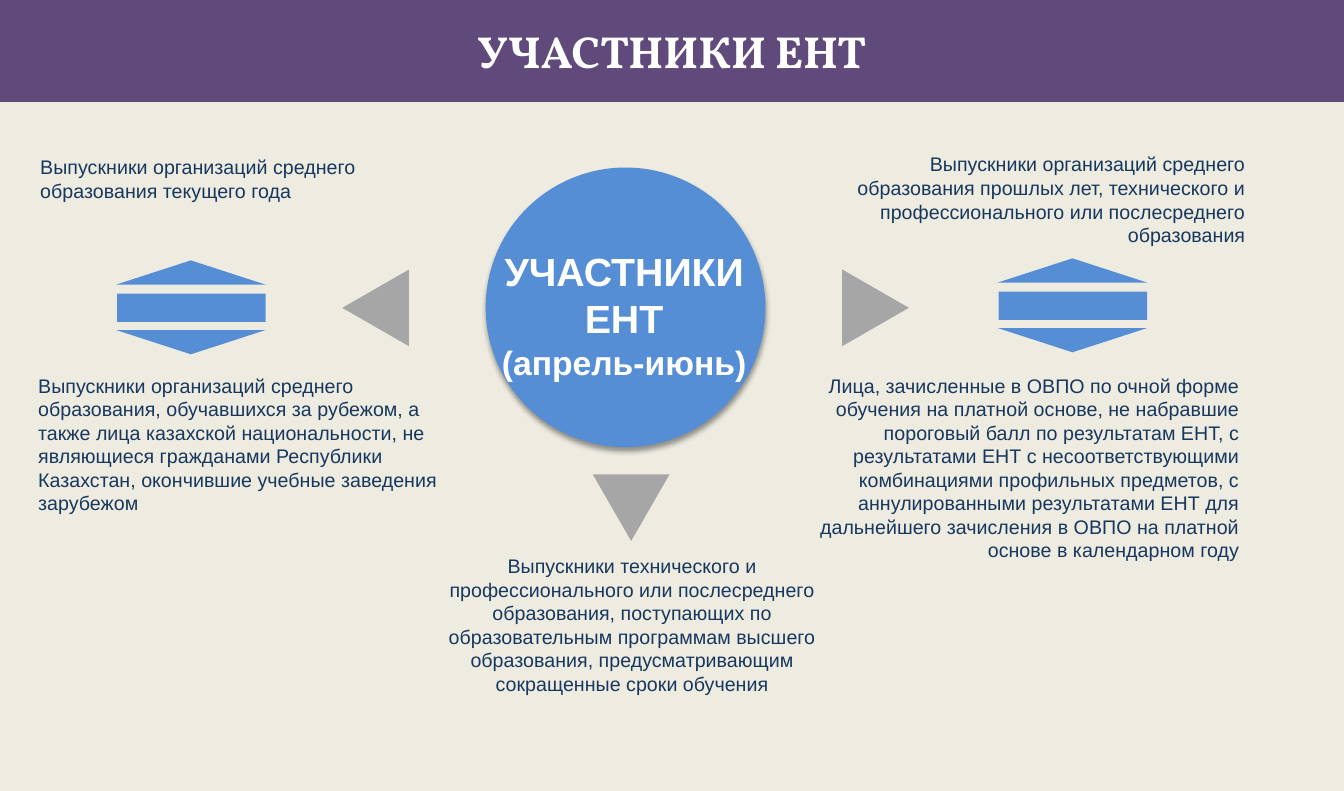
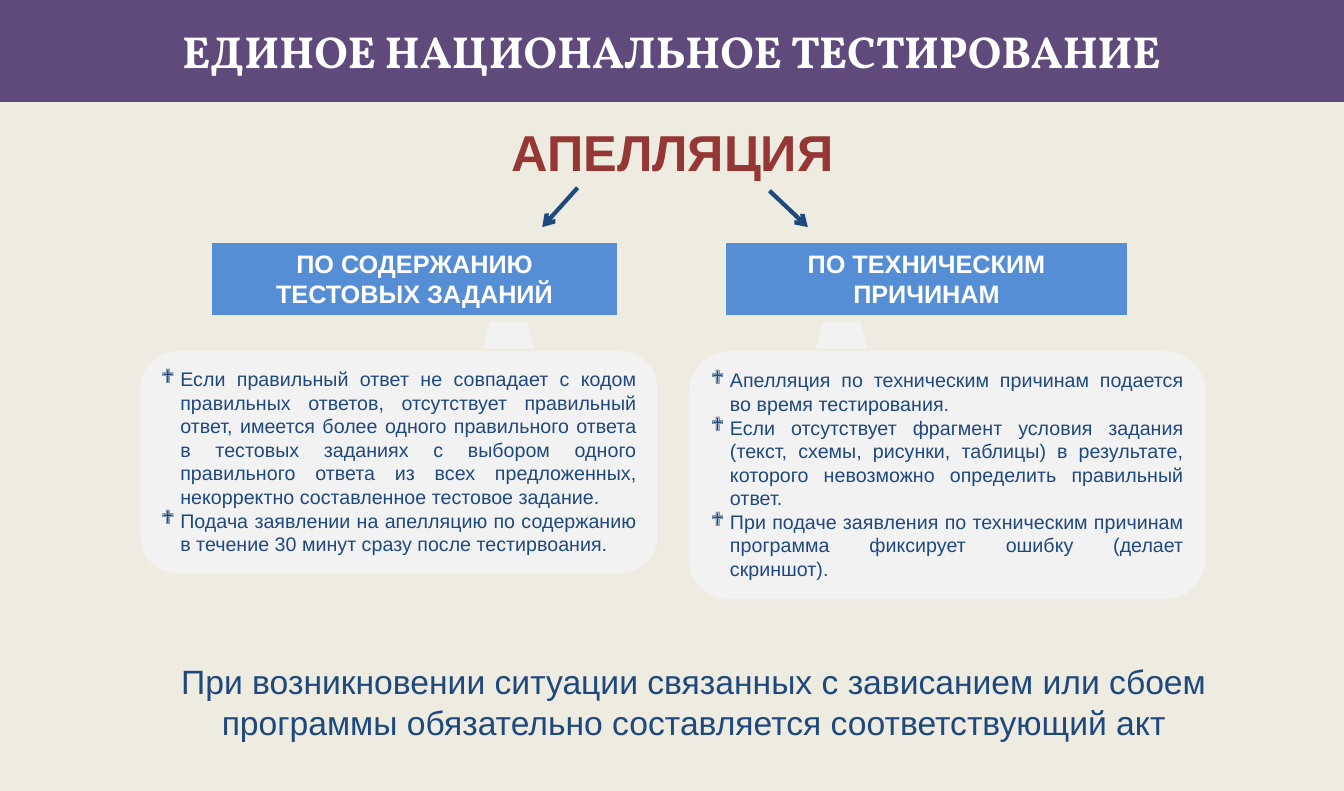
from dataclasses import dataclass

from lxml import etree
from pptx import Presentation
from pptx.dml.color import RGBColor
from pptx.enum.shapes import MSO_CONNECTOR, MSO_SHAPE
from pptx.enum.text import MSO_ANCHOR, MSO_AUTO_SIZE, PP_ALIGN
from pptx.oxml.ns import qn
from pptx.util import Emu, Inches, Pt

RECTANGLE = MSO_SHAPE.RECTANGLE
ROUNDED = MSO_SHAPE.ROUNDED_RECTANGLE
OVAL = MSO_SHAPE.OVAL
TRIANGLE = MSO_SHAPE.ISOSCELES_TRIANGLE
TRAPEZOID = MSO_SHAPE.TRAPEZOID
STRAIGHT = MSO_CONNECTOR.STRAIGHT
TOP, MIDDLE = MSO_ANCHOR.TOP, MSO_ANCHOR.MIDDLE
LEFT, CENTER, RIGHT = PP_ALIGN.LEFT, PP_ALIGN.CENTER, PP_ALIGN.RIGHT
JUSTIFY = PP_ALIGN.JUSTIFY
GROW = MSO_AUTO_SIZE.SHAPE_TO_FIT_TEXT
FIXED = MSO_AUTO_SIZE.NONE

SLIDE_WIDTH, SLIDE_HEIGHT = Emu(12169775), Emu(7165975)
BAND_HEIGHT = 1.01
BULLET_INDENT = 0.19


@dataclass(frozen=True)
class Theme:
    background: str = "EEECE1"
    band: str = "604A7B"
    accent: str = "558ED5"
    pointer: str = "A6A6A6"
    panel: str = "F2F2F2"
    white: str = "FFFFFF"
    body: str = "17375E"
    navy: str = "1F497D"
    red: str = "953735"
    title_font: str = "Vollkorn"
    body_font: str = "Arial"
    bullet_font: str = "Wingdings"
    title_size: int = 32
    heading_size: int = 36
    hub_size: int = 28
    large_size: int = 24
    label_size: int = 18
    body_size: int = 14


THEME = Theme()


def text_style(size, color, bold=False, font=THEME.body_font):
    return {"size": Pt(size), "bold": bold, "name": font}, color


TITLE = text_style(THEME.title_size, THEME.white, True, THEME.title_font)
HEADING = text_style(THEME.heading_size, THEME.red, True)
HUB = text_style(THEME.hub_size, THEME.white, True)
HUB_DATE = text_style(THEME.large_size, THEME.white, True)
LABEL = text_style(THEME.label_size, THEME.white, True)
BODY = text_style(THEME.body_size, THEME.body)
PANEL = text_style(THEME.body_size, THEME.navy)
NOTICE = text_style(THEME.large_size, THEME.navy)


def rgb(color):
    return RGBColor.from_string(color)


def inches(*lengths):
    return [Inches(length) for length in lengths]


def add_child(parent, tag, **attributes):
    child = etree.SubElement(parent, qn(tag))
    for name, value in attributes.items():
        child.set(name, str(value))
    return child


def add_bullet(paragraph):
    properties = paragraph._p.get_or_add_pPr()
    properties.set("marL", str(Inches(BULLET_INDENT)))
    properties.set("indent", str(-Inches(BULLET_INDENT)))
    add_child(properties, "a:buFont", typeface=THEME.bullet_font)
    add_child(properties, "a:buChar", char="❖")


def write_text(shape, lines, align=CENTER, anchor=TOP, auto_size=GROW, bulleted=False):
    frame = shape.text_frame
    frame_format = {"word_wrap": True, "auto_size": auto_size, "vertical_anchor": anchor}
    for name, value in frame_format.items():
        setattr(frame, name, value)
    for index, (text, (font_format, color)) in enumerate(lines):
        paragraph = frame.add_paragraph() if index else frame.paragraphs[0]
        paragraph.alignment = align
        if bulleted:
            add_bullet(paragraph)
        run = paragraph.add_run()
        run.text = text
        for name, value in font_format.items():
            setattr(run.font, name, value)
        run.font.color.rgb = rgb(color)


def add_figure(slide, kind, box, color, rotation=0):
    shape = slide.shapes.add_shape(kind, *inches(*box))
    shape.shadow.inherit = False
    shape.rotation = rotation
    shape.fill.solid()
    shape.fill.fore_color.rgb = rgb(color)
    shape.line.fill.background()
    return shape


def add_text(slide, box, lines, align=CENTER, anchor=TOP):
    write_text(slide.shapes.add_textbox(*inches(*box)), lines, align, anchor)


def add_titled_slide(presentation, title):
    slide = presentation.slides.add_slide(presentation.slide_layouts[6])
    band = add_figure(slide, RECTANGLE, (0, 0, SLIDE_WIDTH.inches, BAND_HEIGHT), THEME.band)
    write_text(band, [(title, TITLE)], anchor=MIDDLE, auto_size=FIXED)
    return slide


def add_hub(slide):
    circle = add_figure(slide, OVAL, (4.81, 1.66, 2.77, 2.77), THEME.accent)
    effects = circle._element.spPr.find(qn("a:effectLst"))
    shadow = add_child(effects, "a:outerShdw", blurRad=Pt(4), dist=Pt(3),
                       dir=90 * 60000, rotWithShape=0)
    color = add_child(shadow, "a:srgbClr", val="000000")
    add_child(color, "a:alpha", val=40000)
    lines = [("УЧАСТНИКИ ЕНТ", HUB), ("(апрель-июнь)", HUB_DATE)]
    add_text(slide, (4.84, 2.44, 2.68, 1.35), lines, anchor=MIDDLE)


def add_divider(slide, left, top):
    width, height = 1.48, 0.24
    add_figure(slide, RECTANGLE, (left + 0.01, top + 0.33, 1.47, 0.28), THEME.accent)
    for offset, rotation in ((0, 0), (0.69, 180)):
        add_figure(slide, TRIANGLE, (left, top + offset, width, height), THEME.accent, rotation)


def add_arrow(slide, start, end):
    connector = slide.shapes.add_connector(STRAIGHT, *inches(*start, *end))
    connector.line.color.rgb = rgb(THEME.navy)
    connector.line.width = Pt(3)
    add_child(connector.line._get_or_add_ln(), "a:tailEnd", type="arrow")
    add_child(connector._element.spPr, "a:effectLst")


def add_label(slide, left, width, text):
    label = add_figure(slide, RECTANGLE, (left, 2.41, width, 0.71), THEME.accent)
    write_text(label, [(text, LABEL)])


def add_panel(slide, left, height, texts):
    panel = add_figure(slide, ROUNDED, (left, 3.48, 5.12, height), THEME.panel)
    write_text(panel, [(text, PANEL) for text in texts], JUSTIFY, bulleted=True)


def add_tab(slide, left):
    tab = add_figure(slide, TRAPEZOID, (left, 3.2, 0.47, 0.24), THEME.panel)
    tab.line.color.rgb = rgb(THEME.panel)
    tab.line.width = Pt(2)


def build_participants(presentation):
    slide = add_titled_slide(presentation, "УЧАСТНИКИ ЕНТ")
    add_hub(slide)
    for left, top, rotation in ((3.34, 2.72, 270), (8.29, 2.72, 90), (5.87, 4.7, 180)):
        add_figure(slide, TRIANGLE, (left, top, 0.76, 0.66), THEME.pointer, rotation)
    for left, top in ((1.15, 2.58), (9.88, 2.56)):
        add_divider(slide, left, top)
    groups = [
        ((0.3, 1.49, 3.91, 0.57), LEFT,
         "Выпускники организаций среднего образования текущего года"),
        ((0.28, 3.65, 4.33, 1.51), LEFT,
         "Выпускники организаций среднего образования, обучавшихся за рубежом, "
         "а также лица казахской национальности, не являющиеся гражданами "
         "Республики Казахстан, окончившие учебные заведения зарубежом"),
        ((7.97, 1.46, 4.46, 1.04), RIGHT,
         "Выпускники организаций среднего образования прошлых лет, "
         "технического и профессионального или послесреднего образования"),
        ((7.65, 3.65, 4.72, 1.99), RIGHT,
         "Лица, зачисленные в ОВПО по очной форме обучения на платной основе, "
         "не набравшие пороговый балл по результатам ЕНТ, с результатами ЕНТ "
         "с несоответствующими комбинациями профильных предметов, "
         "с аннулированными результатами ЕНТ для дальнейшего зачисления в ОВПО "
         "на платной основе в календарном году"),
        ((4.03, 5.44, 4.46, 1.51), CENTER,
         "Выпускники технического и профессионального или послесреднего "
         "образования, поступающих по образовательным программам высшего "
         "образования, предусматривающим сокращенные сроки обучения"),
    ]
    for box, align, text in groups:
        add_text(slide, box, [(text, BODY)], align)


def build_appeal(presentation):
    slide = add_titled_slide(presentation, "ЕДИНОЕ НАЦИОНАЛЬНОЕ ТЕСТИРОВАНИЕ")
    add_text(slide, (4.93, 1.15, 3.46, 0.71), [("АПЕЛЛЯЦИЯ", HEADING)])
    add_panel(slide, 6.82, 2.46, [
        "Апелляция по техническим причинам подается во время тестирования.",
        "Если отсутствует фрагмент условия задания (текст, схемы, рисунки, таблицы) "
        "в результате, которого невозможно определить правильный ответ.",
        "При подаче заявления по техническим причинам программа фиксирует ошибку "
        "(делает скриншот).",
    ])
    add_panel(slide, 1.39, 2.2, [
        "Если правильный ответ не совпадает с кодом правильных ответов, отсутствует "
        "правильный ответ, имеется более одного правильного ответа в тестовых заданиях "
        "с выбором одного правильного ответа из всех предложенных, некорректно "
        "составленное тестовое задание.",
        "Подача заявлении на апелляцию по содержанию в течение 30 минут сразу после "
        "тестирвоания.",
    ])
    add_label(slide, 2.1, 4.01, "ПО СОДЕРЖАНИЮ ТЕСТОВЫХ ЗАДАНИЙ")
    add_label(slide, 7.19, 3.97, "ПО ТЕХНИЧЕСКИМ ПРИЧИНАМ")
    add_arrow(slide, (5.72, 1.86), (5.37, 2.25))
    add_arrow(slide, (7.62, 1.89), (8, 2.25))
    for left in (4.8, 8.1):
        add_tab(slide, left)
    notice = ("При возникновении ситуации связанных с зависанием или сбоем программы "
              "обязательно составляется соответствующий акт")
    add_text(slide, (1.58, 6.5, 10.58, 0.91), [(notice, NOTICE)])


def main():
    presentation = Presentation()
    presentation.slide_width = SLIDE_WIDTH
    presentation.slide_height = SLIDE_HEIGHT
    background = presentation.slide_master.background.fill
    background.solid()
    background.fore_color.rgb = rgb(THEME.background)
    build_participants(presentation)
    build_appeal(presentation)
    presentation.save("out.pptx")


if __name__ == "__main__":
    main()
